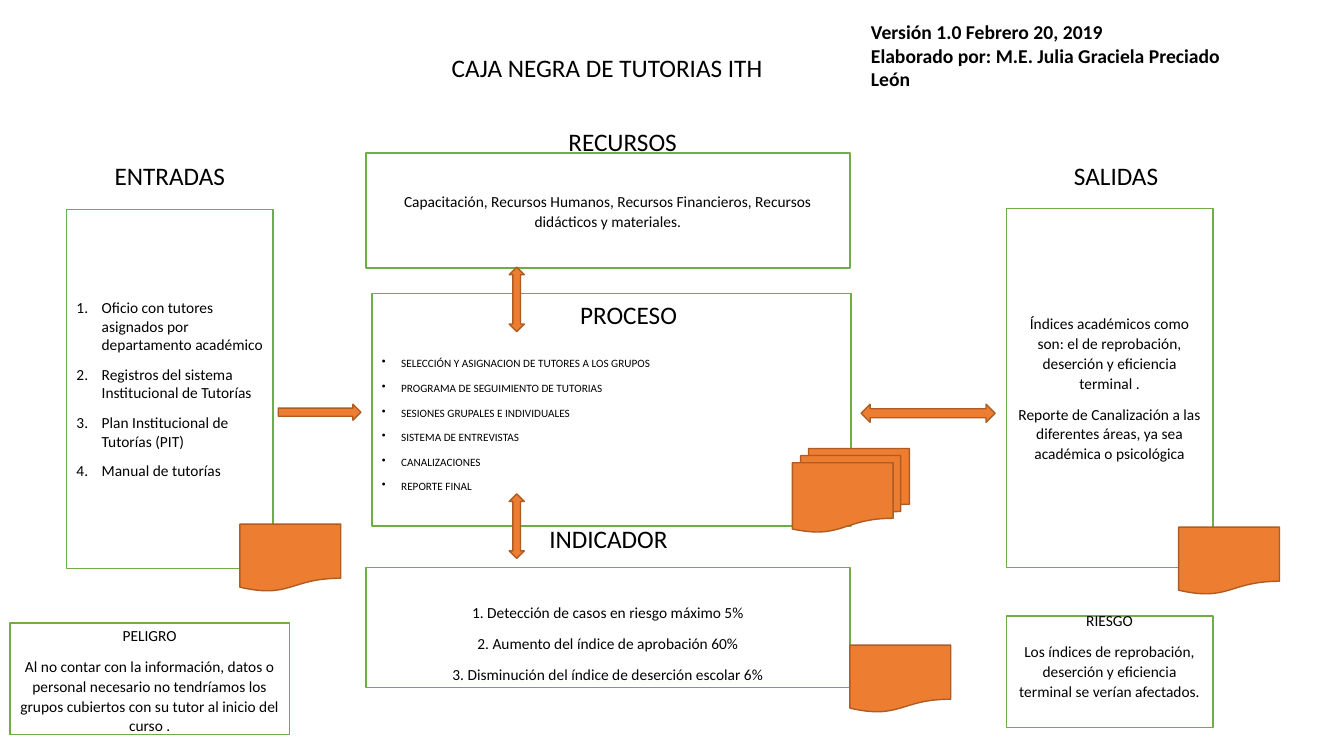
from pptx import Presentation
from pptx.dml.color import RGBColor
from pptx.enum.shapes import MSO_SHAPE
from pptx.enum.text import MSO_ANCHOR, MSO_AUTO_SIZE, PP_ALIGN
from pptx.oxml.ns import qn
from pptx.util import Inches, Pt
from lxml import etree

CELL = Inches(0.1)  # the slide is a grid of 133.3 columns by 75 rows
COLORS = {"text": "000000", "box": "FFFFFF", "border": "70AD47",
          "accent": "ED7D31", "edge": "AF5C24"}
FONT = "Calibri"
TITLE_ONLY = 5
LEFT, CENTER = PP_ALIGN.LEFT, PP_ALIGN.CENTER
TOP, MIDDLE = MSO_ANCHOR.TOP, MSO_ANCHOR.MIDDLE
RECT = MSO_SHAPE.RECTANGLE
DOCUMENT, DOCUMENTS = MSO_SHAPE.FLOWCHART_DOCUMENT, MSO_SHAPE.FLOWCHART_MULTIDOCUMENT
UP_DOWN, LEFT_RIGHT = MSO_SHAPE.UP_DOWN_ARROW, MSO_SHAPE.LEFT_RIGHT_ARROW
RIGHT = MSO_SHAPE.RIGHT_ARROW

BODY = {"alignment": CENTER, "line_spacing": 1.07, "space_after": Pt(8)}
LIST = {"alignment": LEFT, "line_spacing": 1.0, "space_after": Pt(8)}
PLAIN = {"alignment": LEFT, "space_before": Pt(0)}
NUMBERS = ("buAutoNum", {"type": "arabicPeriod"}, 0.25)
BULLETS = ("buChar", {"char": "•"}, 0.19)

HEADINGS = [
    ("ENTRADAS", (10.3, 15.2, 13.1, 4.3)),
    ("RECURSOS", (55.3, 11.8, 12.9, 4.3)),
    ("PROCESO", (56.5, 29, 11.7, 4.3)),
    ("INDICADOR", (53.4, 51.2, 13.9, 4.3)),
    ("SALIDAS", (105.5, 15.2, 10.4, 4.3)),
]
# Cells, paragraphs, then options for text_box
BOXES = [
    ((6.6, 20.8, 20.5, 35.6),
     ["Oficio con tutores asignados por departamento académico",
      "Registros del sistema Institucional de Tutorías",
      "Plan Institucional de Tutorías (PIT)",
      "Manual de tutorías"],
     {"layout": LIST, "marker": NUMBERS}),
    ((36.3, 15.2, 48, 11.4),
     ["Capacitación, Recursos Humanos, Recursos Financieros, Recursos "
      "didácticos y materiales."], {}),
    ((36.9, 29.1, 47.5, 23.1),
     ["SELECCIÓN Y ASIGNACION DE TUTORES A LOS GRUPOS",
      "PROGRAMA DE SEGUIMIENTO DE TUTORIAS",
      "SESIONES GRUPALES E INDIVIDUALES",
      "SISTEMA DE ENTREVISTAS",
      "CANALIZACIONES",
      "REPORTE FINAL"],
     {"layout": LIST, "marker": BULLETS, "size": 8, "insets": (3.5, 0.5)}),
    ((36.3, 56.3, 48, 11.9),
     ["1. Detección de casos en riesgo máximo 5%",
      "2. Aumento del índice de aprobación 60%",
      "3. Disminución del índice de deserción escolar 6%"],
     {"insets": (3.6, 0.5)}),
    ((99.8, 20.7, 20.5, 35.6),
     ["Índices académicos como son: el de reprobación, deserción y "
      "eficiencia terminal .",
      "Reporte de Canalización a las diferentes áreas, ya sea académica "
      "o psicológica"], {}),
    ((1, 61.8, 27.7, 11.1),
     ["PELIGRO",
      "Al no contar con la información, datos o personal necesario no "
      "tendríamos los grupos cubiertos con su tutor al inicio del curso ."],
     {"insets": (0.2, 0)}),
    ((99.8, 61.1, 20.5, 11.1),
     ["RIESGO",
      "Los índices de reprobación, deserción y eficiencia terminal se "
      "verían afectados."],
     {"insets": (0, 3.3)}),
]
SYMBOLS = [
    (UP_DOWN, (50.5, 26.5, 1.5, 6.4)),
    (UP_DOWN, (50.5, 49, 1.5, 6.4)),
    (LEFT_RIGHT, (85.4, 40.1, 13.3, 1.8)),
    (RIGHT, (27.6, 40.1, 8.2, 1.6)),
    (DOCUMENT, (23.8, 52, 10, 6.7)),
    (DOCUMENT, (84.3, 64, 10, 6.7)),
    (DOCUMENT, (116.9, 52.3, 10, 6.7)),
    (DOCUMENTS, (78.6, 44.5, 11.6, 8.3)),
]


def cells(*counts):
    return [round(n * CELL) for n in counts]


def rgb(name):
    return RGBColor.from_string(COLORS[name])


def assign(obj, values):
    for name, value in values.items():
        setattr(obj, name, value)


def add_marker(p, marker):
    tag, attrs, indent = marker
    pPr = p._p.get_or_add_pPr()
    pPr.set("marL", str(Inches(indent)))
    pPr.set("indent", str(-Inches(indent)))
    etree.SubElement(pPr, qn(f"a:{tag}"), attrs)


def write(tf, lines, size, layout, bold=False, marker=None):
    for i, line in enumerate(lines):
        p = tf.add_paragraph() if i else tf.paragraphs[0]
        assign(p, layout)
        if marker:
            add_marker(p, marker)
        r = p.add_run()
        r.text = line
        assign(r.font, {"name": FONT, "size": Pt(size), "bold": bold})
        r.font.color.rgb = rgb("text")


def shape(s, kind, box, fill, line):
    sp = s.shapes.add_shape(kind, *cells(*box))
    sp.shadow.inherit = False
    sp.fill.solid()
    sp.fill.fore_color.rgb = rgb(fill)
    sp.line.color.rgb = rgb(line)
    sp.line.width = Pt(1)
    return sp


def text_box(s, box, lines, layout=BODY, size=11, marker=None, insets=(0.5, 0.5)):
    """Bordered box; insets are the top and bottom margins in cells."""
    tf = shape(s, RECT, box, "box", "border").text_frame
    top, bottom = cells(*insets)
    assign(tf, {"word_wrap": True, "vertical_anchor": MIDDLE,
                "margin_top": top, "margin_bottom": bottom})
    write(tf, lines, size, layout, marker=marker)


def label(s, box, lines, size, layout, wrap=False, bold=False):
    tf = s.shapes.add_textbox(*cells(*box)).text_frame
    tf.word_wrap = wrap
    write(tf, lines, size, layout, bold)


def title(s, box, text):
    sp = s.shapes.title
    assign(sp, dict(zip(("left", "top", "width", "height"), cells(*box))))
    assign(sp.text_frame, {"word_wrap": False, "vertical_anchor": TOP,
                           "auto_size": MSO_AUTO_SIZE.NONE})
    write(sp.text_frame, [text], 18, PLAIN)


def main():
    prs = Presentation()
    prs.slide_width, prs.slide_height = cells(133.3, 75)
    s = prs.slides.add_slide(prs.slide_layouts[TITLE_ONLY])
    title(s, (43.8, 4.7, 33.1, 4), "CAJA NEGRA DE TUTORIAS ITH")
    for box, lines, options in BOXES:
        text_box(s, box, lines, **options)
    for text, box in HEADINGS:
        label(s, box, [text], 18, BODY)
    for kind, box in SYMBOLS:
        shape(s, kind, box, "accent", "edge")
    label(s, (85.4, 1.5, 40.3, 8.1),
          ["Versión 1.0 Febrero 20, 2019",
           "Elaborado por: M.E. Julia Graciela Preciado León"],
          14, PLAIN, wrap=True, bold=True)
    prs.save("out.pptx")


if __name__ == "__main__":
    main()
